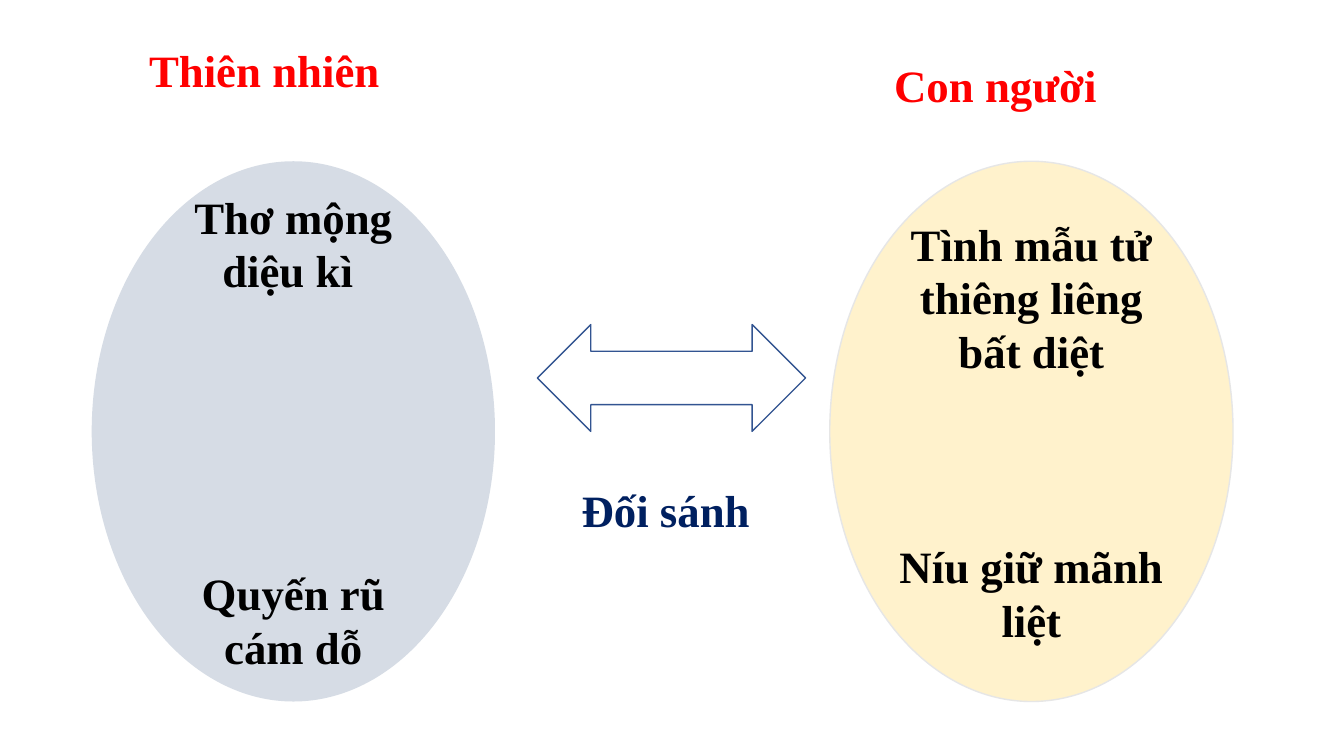
import pptx
import pptx.util
import pptx.dml.color
import pptx.enum.shapes
import pptx.enum.text

WIDTH, HEIGHT = 13.33, 7.5
FONT, SIZE, LINE_HEIGHT = "Times New Roman", 32, 38.4
LABELS = [
    ("Thiên nhiên", 1.38, 0.37, 4.49, "FF0000"),
    ("Con người", 8.77, 0.52, 3.64, "FF0000"),
    ("Đối sánh", 5.67, 4.74, 2.76, "002060"),
]
OVALS = [
    (0.91, "D6DCE5", None, ["Thơ mộng diệu kì ", "Quyến rũ cám dỗ"], 5),
    (8.23, "FFF2CC", "E6E6E6", ["Tình mẫu tử thiêng liêng bất diệt", "Níu giữ mãnh liệt"], 3),
]
OVAL_TOP, OVAL_WIDTH, OVAL_HEIGHT = 1.6, 4, 5.36
ARROW = (5.33, 3.22, 2.66, 1.06)


def colour(value):
    return pptx.dml.color.RGBColor.from_string(value)


def inches(*lengths):
    return [pptx.util.Inches(length) for length in lengths]


def write(para, text, ink):
    para.text = text
    for span in para.runs:
        span.font.name = FONT
        span.font.size = pptx.util.Pt(SIZE)
        span.font.bold = True
        span.font.color.rgb = colour(ink)


def add_figure(page, kind, place, fill, line):
    figure = page.shapes.add_shape(kind, *inches(*place))
    figure.shadow.inherit = False
    if fill:
        figure.fill.solid()
        figure.fill.fore_color.rgb = colour(fill)
    else:
        figure.fill.background()
    if line:
        figure.line.color.rgb = colour(line)
        figure.line.width = pptx.util.Pt(1)
    else:
        figure.line.fill.background()
    return figure


def add_oval(page, left, fill, line, texts, gap_lines):
    place = (left, OVAL_TOP, OVAL_WIDTH, OVAL_HEIGHT)
    oval = add_figure(page, pptx.enum.shapes.MSO_SHAPE.OVAL, place, fill, line)
    frame = oval.text_frame
    frame.word_wrap = True
    frame.vertical_anchor = pptx.enum.text.MSO_ANCHOR.MIDDLE
    frame.text = "\n".join(texts)
    for para, text in zip(frame.paragraphs, texts):
        write(para, text, "000000")
        para.alignment = pptx.enum.text.PP_ALIGN.CENTER
    frame.paragraphs[-1].space_before = pptx.util.Pt(gap_lines * LINE_HEIGHT)


def add_label(page, text, left, top, width, ink):
    box = page.shapes.add_textbox(*inches(left, top, width, 0.64))
    box.text_frame.word_wrap = True
    write(box.text_frame.paragraphs[0], text, ink)


def main():
    deck = pptx.Presentation()
    deck.slide_width, deck.slide_height = inches(WIDTH, HEIGHT)
    page = deck.slides.add_slide(deck.slide_layouts[6])
    for oval in OVALS:
        add_oval(page, *oval)
    add_figure(page, pptx.enum.shapes.MSO_SHAPE.LEFT_RIGHT_ARROW, ARROW, None, "325491")
    for label in LABELS:
        add_label(page, *label)
    deck.save("out.pptx")


if __name__ == "__main__":
    main()
